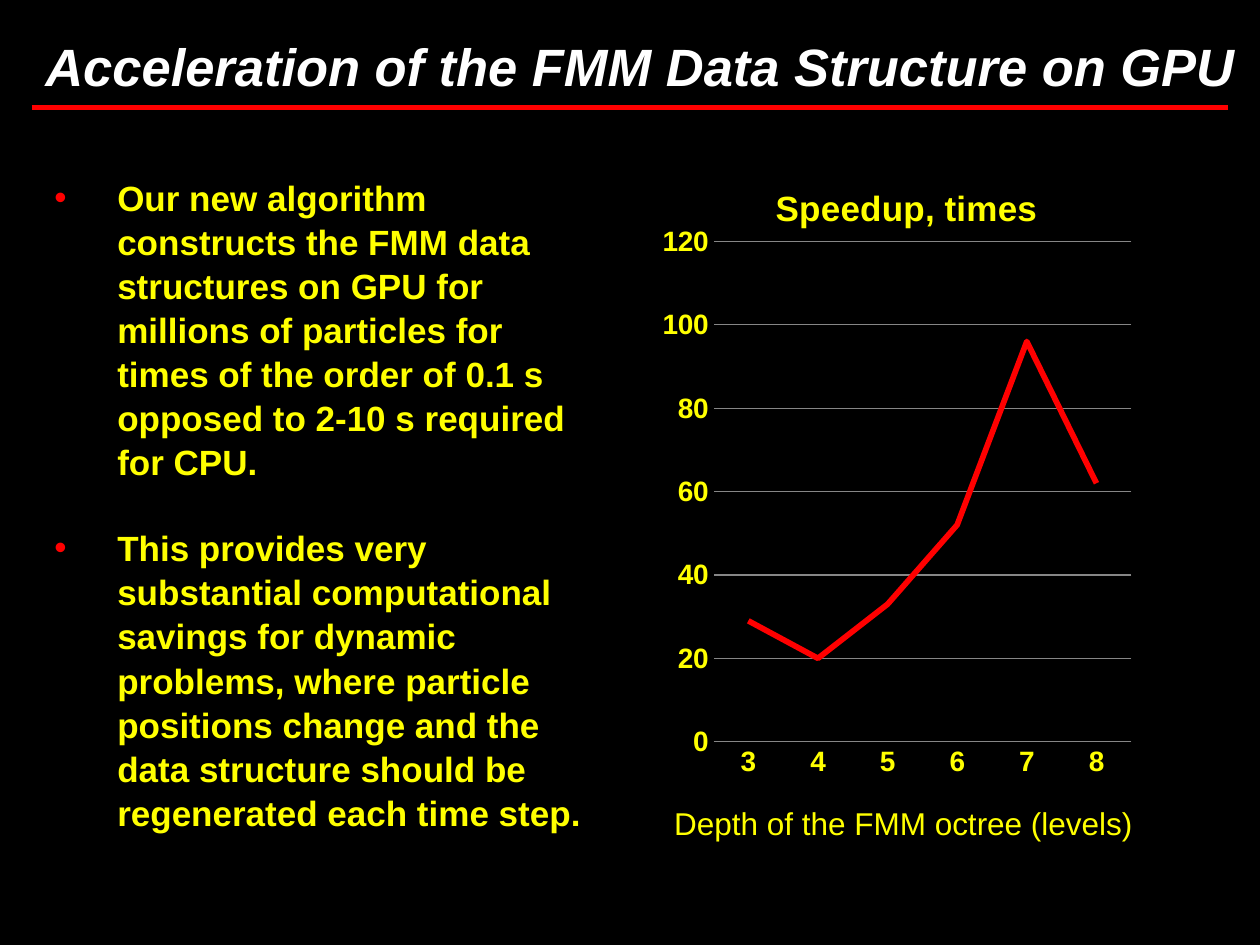
from lxml import etree
from pptx import Presentation
from pptx import util as u
from pptx.chart import data
from pptx.dml.color import RGBColor
from pptx.enum import chart as ch, shapes, text
from pptx.oxml import ns

COLORS = {"bg": "000000", "title": "FFFFFF", "text": "FFFF00",
          "accent": "FF0000", "grid": "868686"}
TITLE = "Acceleration of the FMM Data Structure on GPU"
POINTS = [
    "Our new algorithm constructs the FMM data structures on GPU for millions "
    "of particles for times of the order of 0.1 s opposed to 2-10 s required for CPU.",
    "This provides very substantial computational savings for dynamic problems, "
    "where particle positions change and the data structure should be "
    "regenerated each time step.",
]
LEVELS = ["3", "4", "5", "6", "7", "8"]
SPEEDUP = [29, 20, 33, 52, 96, 62]


class Deck:
    font = "Arial"

    def __init__(self, width, height):
        self.prs = Presentation()
        self.prs.slide_width, self.prs.slide_height = u.Cm(width), u.Cm(height)

    def color(self, name):
        return RGBColor.from_string(COLORS[name])

    def new_slide(self):
        self.s = self.prs.slides.add_slide(self.prs.slide_layouts[1])
        fill = self.s.background.fill
        fill.solid()
        fill.fore_color.rgb = self.color("bg")

    def style(self, font, size, color="text", bold=False, italic=False):
        font.name, font.size = self.font, u.Pt(size)
        font.bold, font.italic = bold, italic
        font.color.rgb = self.color(color)

    def stroke(self, line, color, width):
        line.color.rgb = self.color(color)
        line.width = u.Pt(width)

    def place(self, sp, box):
        sp.left, sp.top, sp.width, sp.height = (u.Cm(v) for v in box)

    def title(self, words, box):
        sp = self.s.shapes.title
        self.place(sp, box)
        tf = sp.text_frame
        tf.text = words
        tf.auto_size = text.MSO_AUTO_SIZE.NONE
        tf.vertical_anchor = text.MSO_ANCHOR.MIDDLE
        p = tf.paragraphs[0]
        p.alignment = text.PP_ALIGN.LEFT
        self.style(p.runs[0].font, 30, "title", bold=True, italic=True)

    def bullets(self, items, box):
        sp = self.s.placeholders[1]
        self.place(sp, box)
        tf = sp.text_frame
        tf.text = "\n".join(items)
        tf.auto_size = text.MSO_AUTO_SIZE.NONE
        for i, p in enumerate(tf.paragraphs):
            p.line_spacing = 1.05
            p.space_before = u.Pt(24 if i else 0)
            pPr = p._p.get_or_add_pPr()
            pPr.set("marL", str(u.Cm(1.27)))
            pPr.set("indent", str(u.Cm(-1.27)))
            clr = etree.SubElement(pPr, ns.qn("a:buClr"))
            etree.SubElement(clr, ns.qn("a:srgbClr"), val=COLORS["accent"])
            etree.SubElement(pPr, ns.qn("a:buChar"), char="•")
            self.style(p.runs[0].font, 20, bold=True)

    def rule(self, x1, x2, y):
        ln = self.s.shapes.add_connector(
            shapes.MSO_CONNECTOR.STRAIGHT, u.Cm(x1), u.Cm(y), u.Cm(x2), u.Cm(y))
        self.stroke(ln.line, "accent", 3)
        etree.SubElement(ln._element.spPr, ns.qn("a:effectLst"))

    def label(self, words, box):
        sp = self.s.shapes.add_textbox(*(u.Cm(v) for v in box))
        tf = sp.text_frame
        tf.text = words
        tf.word_wrap = False
        self.style(tf.paragraphs[0].runs[0].font, 18)

    def layout(self, parent, index, **values):
        for old in parent.findall(ns.qn("c:layout")):
            parent.remove(old)
        lay = etree.Element(ns.qn("c:layout"))
        manual = etree.SubElement(lay, ns.qn("c:manualLayout"))
        for key, val in values.items():
            etree.SubElement(manual, ns.qn("c:" + key), val=str(val))
        parent.insert(index, lay)

    def line_chart(self, heading, cats, vals, box):
        cd = data.CategoryChartData()
        cd.categories = cats
        cd.add_series("Series 1", vals)
        c = self.s.shapes.add_chart(
            ch.XL_CHART_TYPE.LINE, *(u.Cm(v) for v in box), cd).chart
        self.style(c.font, 10)
        c.has_legend = False
        c.has_title = True
        tf = c.chart_title.text_frame
        tf.text = heading
        self.style(tf.paragraphs[0].runs[0].font, 20, bold=True)
        for axis in (c.category_axis, c.value_axis):
            axis.major_tick_mark = axis.minor_tick_mark = ch.XL_TICK_MARK.NONE
            self.style(axis.tick_labels.font, 16, bold=True)
        self.stroke(c.category_axis.format.line, "grid", 0.75)
        va = c.value_axis
        va.minimum_scale, va.maximum_scale, va.major_unit = 0, 120, 20
        va.format.line.fill.background()
        va.has_major_gridlines = True
        self.stroke(va.major_gridlines.format.line, "grid", 0.75)
        plot = c.plots[0]
        plot.vary_by_categories = False
        ser = plot.series[0]
        ser.smooth = False
        ser.marker.style = ch.XL_MARKER_STYLE.NONE
        self.stroke(ser.format.line, "accent", 3.25)
        root = c.element.find(ns.qn("c:chart"))
        self.layout(root.find(ns.qn("c:title")), 1,
                    xMode="edge", yMode="edge", x=0.25, y=0.07)
        self.layout(root.find(ns.qn("c:plotArea")), 0, layoutTarget="inner",
                    xMode="edge", yMode="edge", x=0.15, y=0.15, w=0.75, h=0.65)


def main():
    d = Deck(25.4, 19.05)
    d.new_slide()
    d.rule(0.64, 24.76, 2.16)
    d.title(TITLE, (0.66, 0.15, 24.74, 2.34))
    d.line_chart("Speedup, times", LEVELS, SPEEDUP, (12.7, 2.54, 11.23, 15.52))
    d.label("Depth of the FMM octree (levels)", (13.34, 16.08, 9.86, 1.02))
    d.bullets(POINTS, (0.84, 3.38, 11.23, 13.08))
    d.prs.save("out.pptx")


if __name__ == "__main__":
    main()
